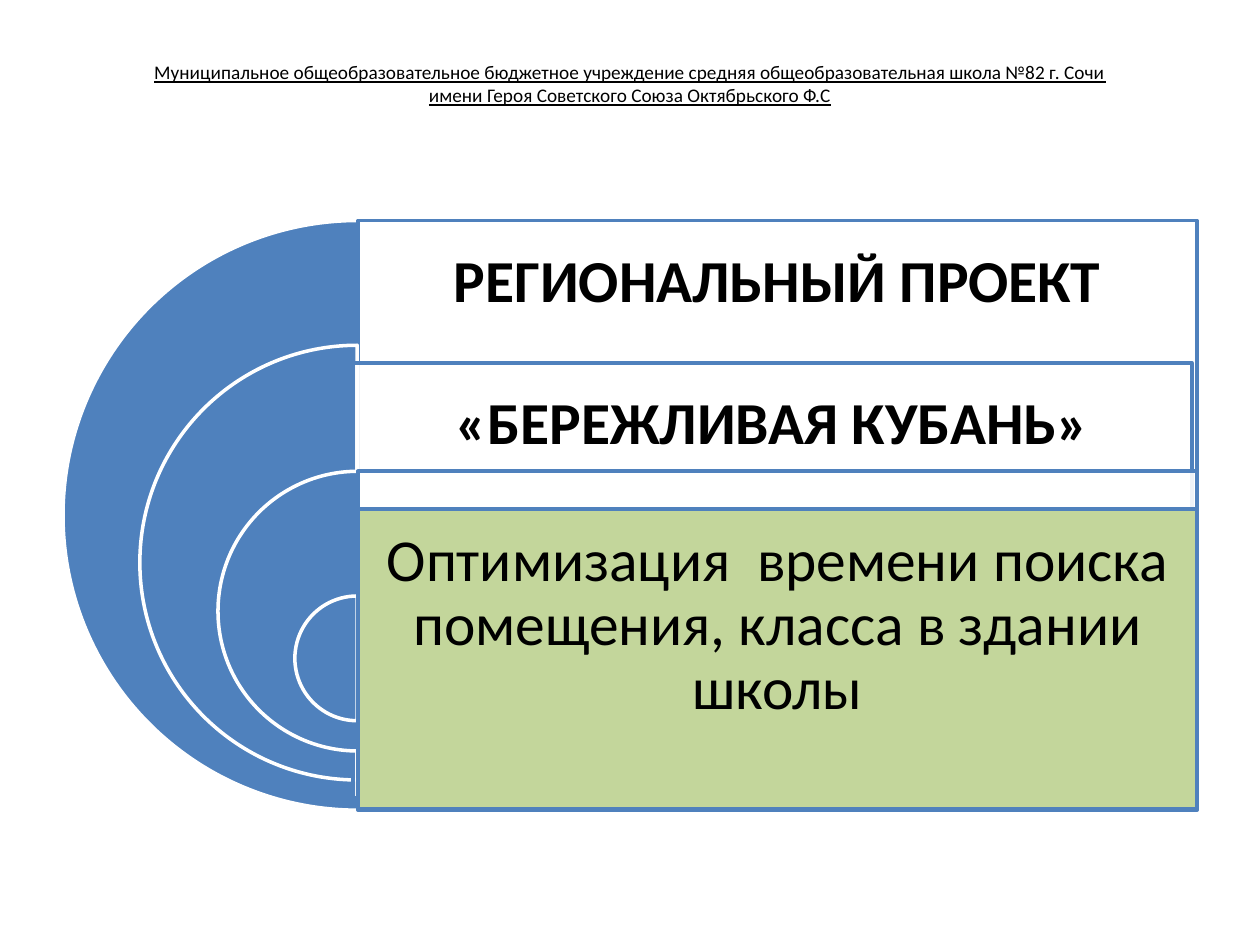
import pptx
import pptx.util
import pptx.dml.color
import pptx.enum.shapes
import pptx.enum.text
import pptx.oxml.ns
from lxml import etree

Inches, Pt = pptx.util.Inches, pptx.util.Pt
SHAPE = pptx.enum.shapes.MSO_SHAPE
ANCHOR = pptx.enum.text.MSO_ANCHOR

COLORS = {"blue": "4F81BD", "white": "FFFFFF", "green": "C3D69B", "black": "000000"}
FONT = "Calibri"
PANEL_LEFT, PANEL_WIDTH = 2.84, 6.66
HEADING_HEIGHT = 0.99
MARGIN = 0.14


def rgb(name):
    return pptx.dml.color.RGBColor.from_string(COLORS[name])


def add_shape(s, kind, box, fill, line):
    sp = s.shapes.add_shape(kind, *map(Inches, box))
    sp.shadow.inherit = False
    sp.fill.solid()
    sp.fill.fore_color.rgb = rgb(fill)
    sp.line.color.rgb = rgb(line)
    sp.line.width = Pt(2)
    return sp


def add_half_disc(s, left, top, size):
    sp = add_shape(s, SHAPE.PIE, (left, top, size, size), "blue", "white")
    # Angles of 90 and 270 degrees, in units of 100000/60000 degree
    sp.adjustments[0] = 54
    sp.adjustments[1] = 162


def add_panel(s, left, top, height, fill="white", opacity=None):
    sp = add_shape(s, SHAPE.RECTANGLE, (left, top, PANEL_WIDTH, height), fill, "blue")
    if opacity is not None:
        color = sp.fill._xPr.find(".//" + pptx.oxml.ns.qn("a:srgbClr"))
        etree.SubElement(color, pptx.oxml.ns.qn("a:alpha"), val=str(opacity * 1000))


def add_text(s, box, lines, size, insets, anchor=ANCHOR.MIDDLE, spacing=0.9,
             bold=False, underline=False):
    tf = s.shapes.add_textbox(*map(Inches, box)).text_frame
    tf.word_wrap = True
    tf.vertical_anchor = anchor
    tf.margin_left, tf.margin_top, tf.margin_right, tf.margin_bottom = map(Inches, insets)
    p = tf.paragraphs[0]
    p.alignment = pptx.enum.text.PP_ALIGN.CENTER
    p.line_spacing = spacing
    for i, line in enumerate(lines):
        if i:
            p.add_line_break()
        r = p.add_run()
        r.text = line
        r.font.name = FONT
        r.font.size = Pt(size)
        r.font.bold = bold
        r.font.underline = underline
        r.font.color.rgb = rgb("black")


def add_heading(s, left, top, text):
    add_text(s, (left, top, PANEL_WIDTH, HEADING_HEIGHT), [text], 34, [MARGIN] * 4, bold=True)


def main():
    prs = pptx.Presentation()
    prs.slide_width, prs.slide_height = Inches(10), Inches(7.5)
    s = prs.slides.add_slide(prs.slide_layouts[6])

    # School name
    add_text(s, (0.5, 0.3, 9, 1.25),
             ["Муниципальное общеобразовательное бюджетное учреждение средняя "
              "общеобразовательная школа №82 г. Сочи",
              "имени Героя Советского Союза Октябрьского Ф.С"],
             11, (0.1, 0.18, 0.1, 0.05), ANCHOR.TOP, spacing=1, underline=True)

    # Project: outer half discs with their panels
    add_half_disc(s, 0.5, 1.75, 4.68)
    add_panel(s, PANEL_LEFT, 1.75, 4.68, opacity=90)
    add_heading(s, PANEL_LEFT, 1.75, "РЕГИОНАЛЬНЫЙ ПРОЕКТ")

    add_half_disc(s, 1.11, 2.74, 3.45)
    add_panel(s, 2.8, 2.88, 3.45, opacity=90)
    add_heading(s, 2.8, 2.88, "«БЕРЕЖЛИВАЯ КУБАНЬ»")

    # Topic: inner half discs and the green panel
    add_half_disc(s, 1.73, 3.74, 2.22)
    add_panel(s, PANEL_LEFT, 3.74, 2.22, opacity=90)
    add_half_disc(s, 2.34, 4.73, 0.99)
    add_panel(s, PANEL_LEFT, 4.04, 2.38, fill="green")
    add_text(s, (PANEL_LEFT, 4.04, PANEL_WIDTH, 2.38),
             ["Оптимизация  времени поиска помещения, класса в здании школы"],
             34, (MARGIN, MARGIN, MARGIN, 0.66))

    prs.save("out.pptx")


if __name__ == "__main__":
    main()
